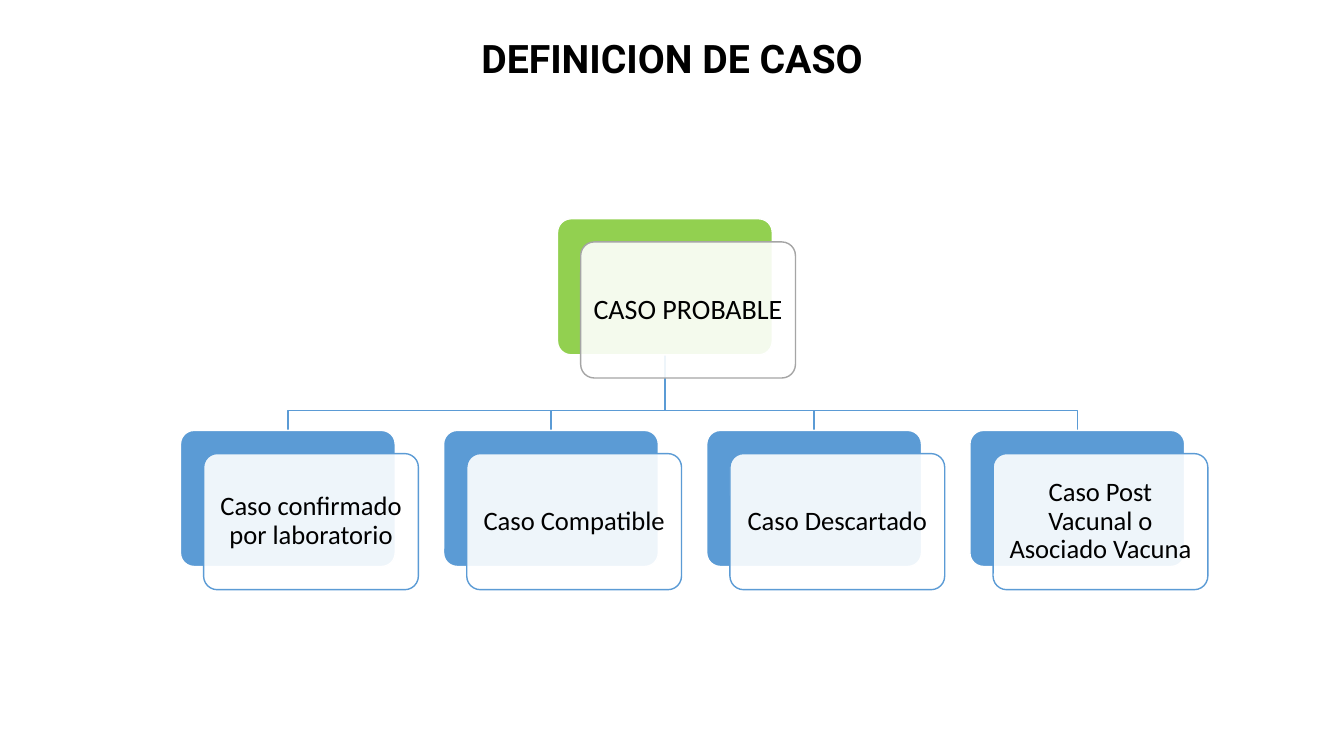
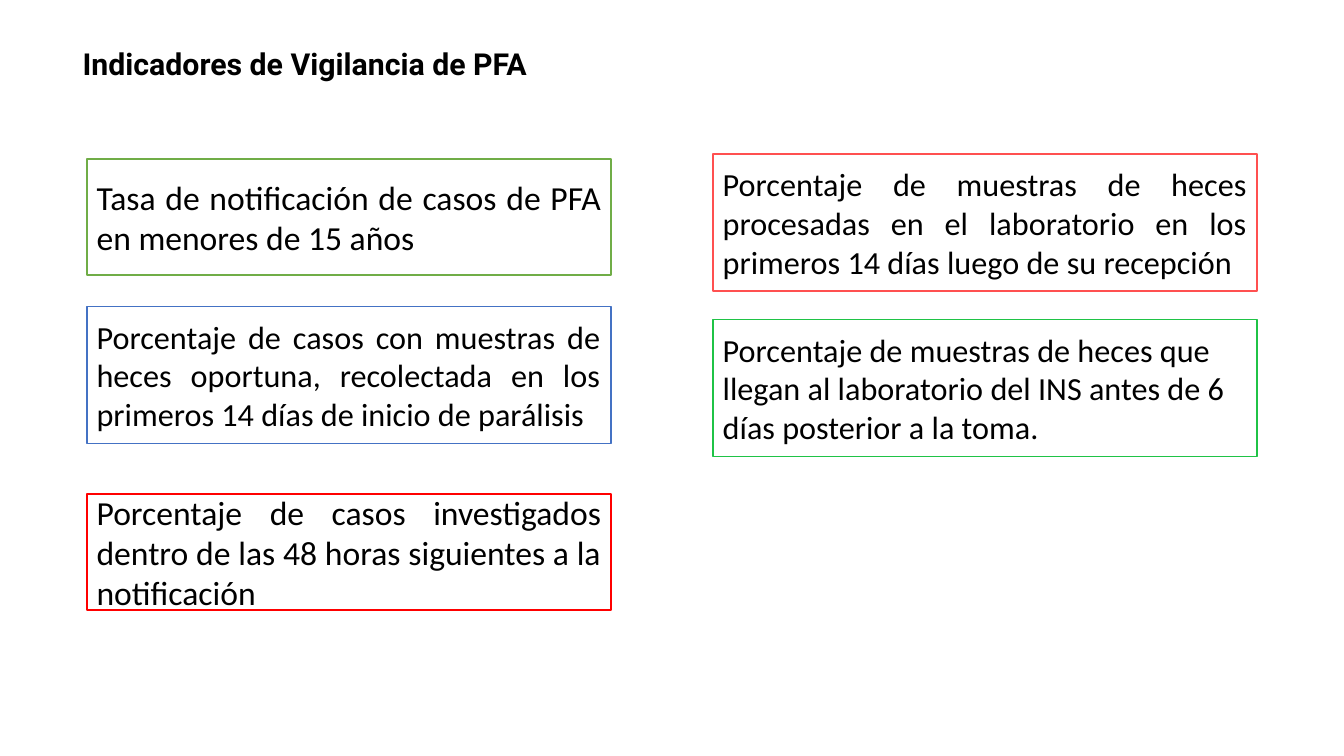
import lxml.etree
import pptx
import pptx.dml.color
import pptx.enum.shapes
import pptx.enum.text
import pptx.oxml.ns
import pptx.util

Inches = pptx.util.Inches
Pt = pptx.util.Pt
hue = pptx.dml.color.RGBColor.from_string
forms = pptx.enum.shapes.MSO_SHAPE
align = pptx.enum.text.PP_ALIGN

# Shared formats
BLACK, WHITE, BLUE = "000000", "FFFFFF", "5B9BD5"
TITLE = {"name": "Roboto", "bold": True}
BODY = {"name": "Calibri", "bold": False}
FRAME = {
    "word_wrap": True,
    "auto_size": pptx.enum.text.MSO_AUTO_SIZE.NONE,
    "vertical_anchor": pptx.enum.text.MSO_ANCHOR.MIDDLE,
}


def write(shape, text, size, side, style, space=1.0):
    frame = shape.text_frame
    for key, value in FRAME.items():
        setattr(frame, key, value)
    line = frame.paragraphs[0]
    line.alignment = side
    line.line_spacing = space
    run = line.add_run()
    run.text = text
    for key, value in {**style, "size": Pt(size)}.items():
        setattr(run.font, key, value)
    run.font.color.rgb = hue(BLACK)


def box(slide, form, place, fill, edge, weight):
    shape = slide.shapes.add_shape(form, *map(Inches, place))
    shape.shadow.inherit = False
    shape.fill.solid()
    shape.fill.fore_color.rgb = hue(fill)
    shape.line.color.rgb = hue(edge)
    shape.line.width = Pt(weight)
    return shape


deck = pptx.Presentation()
deck.slide_width, deck.slide_height = Inches(13.33), Inches(7.5)

# Slides and titles
titles = [
    ("DEFINICION DE CASO", (0.77, 0.29, 11.79, 0.62), 28, align.CENTER),
    ("Indicadores de Vigilancia de PFA", (0.72, 0.43, 11.79, 0.44), 21.6, align.LEFT),
]
slides = []
for text, place, size, side in titles:
    slide = deck.slides.add_slide(deck.slide_layouts[5])
    title = slide.shapes.title
    title.left, title.top, title.width, title.height = map(Inches, place)
    write(title, text, size, side, TITLE, 0.9)
    slides.append(slide)
tree, goals = slides

# Case tree: sizes and places
wide, high, shift = 2.13, 1.35, 0.23
root_x, root_y = 5.53, 2.17
left, row_y, step = 1.79, 4.27, 2.61
cases = [
    "Caso confirmado por laboratorio",
    "Caso Compatible",
    "Caso Descartado",
    "Caso Post Vacunal o Asociado Vacuna",
]
cards = [("CASO PROBABLE", root_x, root_y, "92D050", "A5A5A5", 20)]
cards += [(text, left + i * step, row_y, BLUE, BLUE, 19) for i, text in enumerate(cases)]

# Branches from the root to each case
mid, base, bend = root_x + wide / 2, root_y + high, 4.07
for card in cards[1:]:
    end = card[1] + wide / 2
    path = slides[0].shapes.build_freeform(Inches(mid), Inches(base))
    turns = [(mid, bend), (end, bend), (end, row_y)]
    path.add_line_segments([(Inches(x), Inches(y)) for x, y in turns], close=False)
    branch = path.convert_to_shape()
    branch.shadow.inherit = False
    branch.fill.background()
    branch.line.color.rgb = hue(BLUE)
    branch.line.width = Pt(1)

# Cards: a solid back and a clear front with the text
for text, x, y, fill, edge, size in cards:
    back = box(tree, forms.ROUNDED_RECTANGLE, (x, y, wide, high), fill, WHITE, 1)
    front = box(tree, forms.ROUNDED_RECTANGLE, (x + shift, y + shift, wide, high), WHITE, edge, 1)
    for shape in (back, front):
        shape.adjustments[0] = 0.1
    tint = front.element.spPr.find(".//" + pptx.oxml.ns.qn("a:srgbClr"))
    lxml.etree.SubElement(tint, pptx.oxml.ns.qn("a:alpha"), val="90000")
    for part in ("left", "top", "right", "bottom"):
        setattr(front.text_frame, "margin_" + part, Inches(0.08))
    write(front, text, size, align.CENTER, BODY, 0.9)

# Goals in two columns: left, width, then the boxes of each
columns = [
    (0.86, 5.2, [
        ("Tasa de notificación de casos de PFA en menores de 15 años",
         1.58, 1.15, "70AD47", 24, align.JUSTIFY),
        ("Porcentaje de casos con muestras de heces oportuna, recolectada en los "
         "primeros 14 días de inicio de parálisis",
         3.04, 1.36, "4472C4", 23, align.JUSTIFY),
        ("Porcentaje de casos investigados dentro de las 48 horas siguientes a la "
         "notificación",
         4.9, 1.15, "FF0000", 24, align.JUSTIFY),
    ]),
    (7.07, 5.4, [
        ("Porcentaje de muestras de heces procesadas en el laboratorio en los "
         "primeros 14 días luego de su recepción",
         1.53, 1.36, "FF5050", 23, align.JUSTIFY),
        ("Porcentaje de muestras de heces que llegan al laboratorio del INS antes "
         "de 6 días posterior a la toma.",
         3.17, 1.36, "1FC346", 23, align.LEFT),
    ]),
]
for x, width, items in columns:
    for text, y, height, edge, size, side in items:
        goal = box(goals, forms.RECTANGLE, (x, y, width, height), WHITE, edge, 1.25)
        write(goal, text, size, side, BODY)

deck.save("out.pptx")
